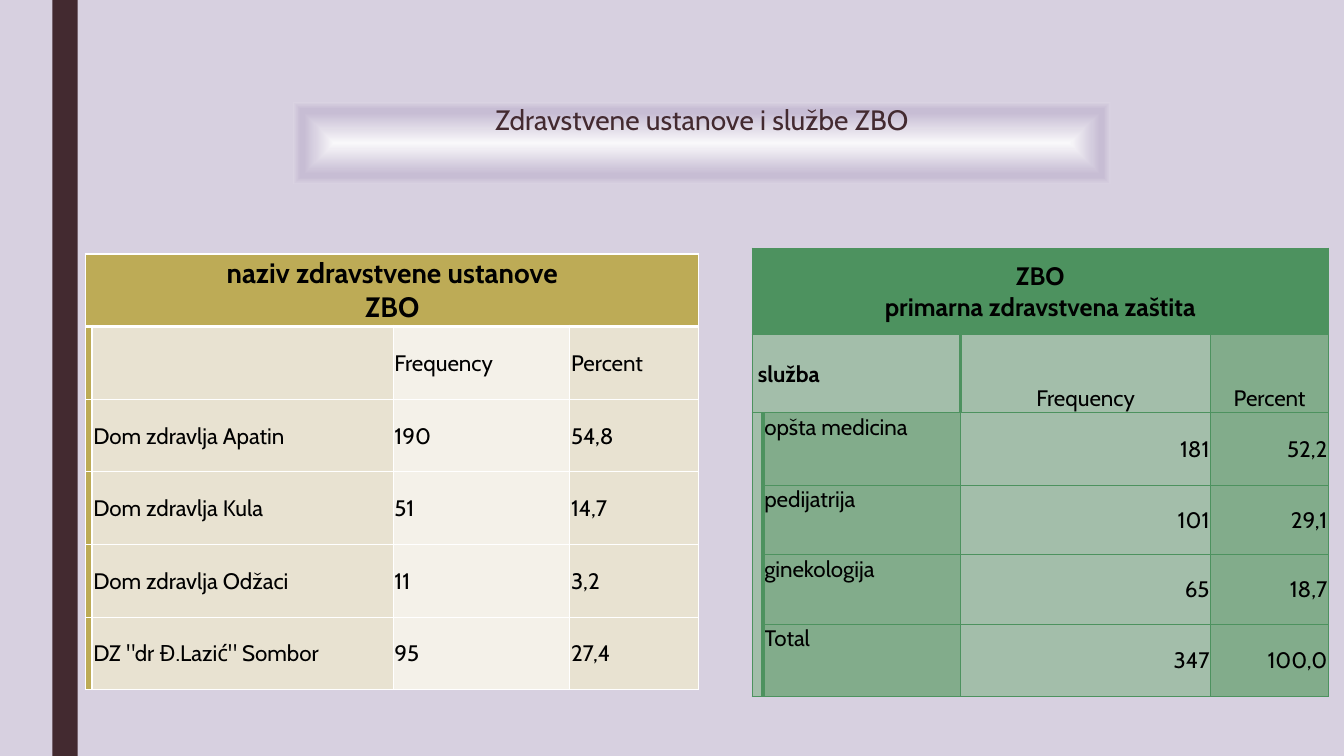
from lxml.etree import SubElement
from pptx import Presentation
from pptx.dml.color import RGBColor
from pptx.enum.shapes import MSO_SHAPE
from pptx.enum.text import MSO_ANCHOR, PP_ALIGN
from pptx.oxml import parse_xml
from pptx.oxml.ns import nsdecls, qn
from pptx.util import Cm, Pt

FONT = "Cabin"
COLORS = {
    "background": "D7D0E0", "bar": "432A30", "text": "000000", "white": "FFFFFF",
    "gold": "BDAB56", "sand": "E8E2D1", "cream": "F4F1E9",
    "green": "4D925F", "sage": "A3BEAA", "moss": "82AC8B",
}
TITLE = "Zdravstvene ustanove i službe ZBO"
TITLE_STOPS = [(0, "F9F8FA"), (74, "C7BDD4"), (83, "C7BDD4"), (100, "DAD3E2")]

INSTITUTIONS_HEADER = ["naziv zdravstvene ustanove", "ZBO"]
INSTITUTIONS = [
    ("", "Frequency", "Percent"),
    ("Dom zdravlja Apatin", "190", "54,8"),
    ("Dom zdravlja Kula", "51", "14,7"),
    ("Dom zdravlja Odžaci", "11", "3,2"),
    ('DZ "dr Đ.Lazić" Sombor', "95", "27,4"),
]
SERVICES_HEADER = ["ZBO", "primarna zdravstvena zaštita"]
SERVICES_COLUMNS = ("služba", "Frequency", "Percent")
SERVICES = [
    ("opšta medicina", "181", "52,2"),
    ("pedijatrija", "101", "29,1"),
    ("ginekologija", "65", "18,7"),
    ("Total", "347", "100,0"),
]

LEFT, CENTER, RIGHT = PP_ALIGN.LEFT, PP_ALIGN.CENTER, PP_ALIGN.RIGHT
TOP, MIDDLE, BOTTOM = MSO_ANCHOR.TOP, MSO_ANCHOR.MIDDLE, MSO_ANCHOR.BOTTOM


def rgb(name):
    return RGBColor.from_string(COLORS[name])


def write(tf, lines, size, color="text", bold=False, align=LEFT):
    for i, line in enumerate(lines):
        p = tf.paragraphs[0] if i == 0 else tf.add_paragraph()
        p.alignment = align
        if line:
            r = p.add_run()
            r.text = line
            r.font.name, r.font.size, r.font.bold = FONT, Pt(size), bold
            r.font.color.rgb = rgb(color)


def add_rect(slide, x, y, w, h):
    sp = slide.shapes.add_shape(MSO_SHAPE.RECTANGLE, Cm(x), Cm(y), Cm(w), Cm(h))
    sp.shadow.inherit = False
    sp.line.fill.background()
    return sp


def fill_from_center(sp, stops):
    """Fill a shape with a rectangular gradient spreading from its centre."""
    gs = "".join(f'<a:gs pos="{pos * 1000}"><a:srgbClr val="{color}"/></a:gs>'
                 for pos, color in stops)
    grad = parse_xml(
        f'<a:gradFill {nsdecls("a")} rotWithShape="1"><a:gsLst>{gs}</a:gsLst>'
        '<a:path path="rect"><a:fillToRect l="50000" t="50000" r="50000" b="50000"/>'
        '</a:path></a:gradFill>')
    sp.fill.solid()
    solid = sp._element.spPr.find(qn("a:solidFill"))
    solid.getparent().replace(solid, grad)


def set_borders(cell, color, width, **special):
    """Draw all four sides; special gives other widths by side (L, R, T, B)."""
    tcPr = cell._tc.get_or_add_tcPr()
    for side in "LRTB":
        ln = SubElement(tcPr, qn(f"a:ln{side}"), w=str(Pt(special.get(side, width))))
        SubElement(SubElement(ln, qn("a:solidFill")), qn("a:srgbClr"), val=COLORS[color])


def style_cell(cell, lines, fill, size=16, bold=False, align=LEFT, anchor=MIDDLE, indent=0.03):
    cell.margin_left, cell.margin_bottom = Cm(indent), 0
    cell.margin_right = cell.margin_top = Cm(0.03)
    cell.vertical_anchor = anchor
    cell.fill.solid()
    cell.fill.fore_color.rgb = rgb(fill)
    write(cell.text_frame, lines, size, bold=bold, align=align)


def add_grid(slide, x, y, widths, heights):
    frame = slide.shapes.add_table(len(heights), len(widths), Cm(x), Cm(y),
                                   Cm(sum(widths)), Cm(sum(heights)))
    table = frame.table
    table.first_row = table.horz_banding = False
    for col, width in zip(table.columns, widths):
        col.width = Cm(width)
    for row, height in zip(table.rows, heights):
        row.height = Cm(height)
    table.cell(0, 0).merge(table.cell(0, len(widths) - 1))
    return table


def add_institutions(slide):
    table = add_grid(slide, 2.16, 6.4, [0.13, 7.59, 4.45, 3.25], [1.83] * 6)
    for c in range(4):
        set_borders(table.cell(0, c), "white", 1, B=3)
    style_cell(table.cell(0, 0), INSTITUTIONS_HEADER, "gold", 20, True, CENTER)
    for i, row in enumerate(INSTITUTIONS, 1):
        for c, (text, fill) in enumerate(zip(("", *row), ("gold", "sand", "cream", "sand"))):
            cell = table.cell(i, c)
            set_borders(cell, "white", 1, T=3 if i == 1 else 1)
            style_cell(cell, [text], fill)


def add_services(slide):
    table = add_grid(slide, 18.95, 6.25, [0.28, 4.98, 6.3, 2.97],
                     [2.18, 1.96, 1.83, 1.75, 1.75, 1.83])
    table.cell(1, 0).merge(table.cell(1, 1))
    table.cell(2, 0).merge(table.cell(5, 0))
    for i in range(6):
        thick = {1: 1, 0: None}.get(i, 0)  # column with the heavy right edge
        for c in range(4):
            special = {}
            if thick is not None and c == thick:
                special = {"R": 2.75}
            elif thick is not None and c == thick + 1:
                special = {"L": 2.75}
            set_borders(table.cell(i, c), "green", 0.5, **special)
    style_cell(table.cell(0, 0), SERVICES_HEADER, "green", 18, True, CENTER)
    name, frequency, percent = SERVICES_COLUMNS
    style_cell(table.cell(1, 0), [name], "sage", bold=True, indent=0.15)
    style_cell(table.cell(1, 2), [frequency], "sage", align=CENTER, anchor=BOTTOM)
    style_cell(table.cell(1, 3), [percent], "moss", align=CENTER, anchor=BOTTOM)
    style_cell(table.cell(2, 0), [""], "sage")
    for i, (name, frequency, percent) in enumerate(SERVICES, 2):
        style_cell(table.cell(i, 1), [name], "moss", anchor=TOP)
        style_cell(table.cell(i, 2), [frequency], "sage", align=RIGHT)
        style_cell(table.cell(i, 3), [percent], "moss", align=RIGHT)


def main():
    prs = Presentation()
    prs.slide_width, prs.slide_height = Cm(33.87), Cm(19.05)
    slide = prs.slides.add_slide(prs.slide_layouts[6])
    slide.background.fill.solid()
    slide.background.fill.fore_color.rgb = rgb("background")

    bar = add_rect(slide, 1.32, 0, 0.64, 19.05)
    bar.fill.solid()
    bar.fill.fore_color.rgb = rgb("bar")

    title = add_rect(slide, 7.39, 2.57, 20.6, 2.08)
    fill_from_center(title, TITLE_STOPS)
    tf = title.text_frame
    tf.word_wrap, tf.vertical_anchor = True, TOP
    write(tf, [TITLE], 20, "bar", align=CENTER)
    tf.paragraphs[0].line_spacing = 0.89

    add_institutions(slide)
    add_services(slide)
    prs.save("out.pptx")


if __name__ == "__main__":
    main()
